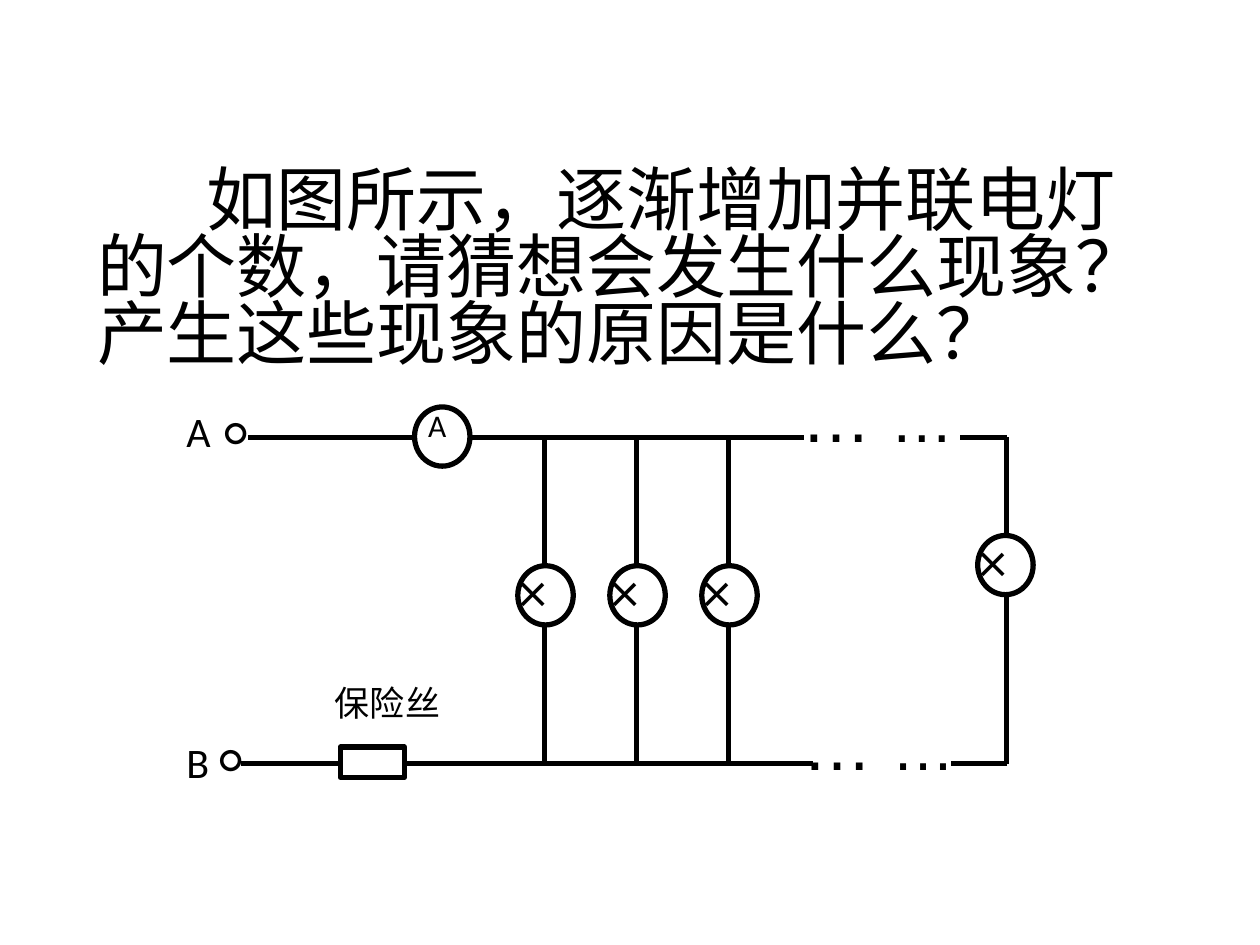
from dataclasses import dataclass

from lxml import etree
from pptx import Presentation
from pptx import util as u
from pptx.dml.color import RGBColor
from pptx.enum import shapes, text
from pptx.oxml.ns import qn


@dataclass(frozen=True)
class Theme:
    ink: RGBColor = RGBColor(0, 0, 0)
    paper: RGBColor = RGBColor(255, 255, 255)
    font: str = "Calibri"
    dots_font: str = "Arial"
    wire: float = 3
    title: float = 40
    dots_small: float = 36
    lamp: float = 32
    terminal: float = 24
    label: float = 20
    meter: float = 18


THEME = Theme()
LAMP_W, LAMP_H = 0.44, 0.47


def place(sp, left, top, width, height):
    sp.left, sp.top = u.Inches(left), u.Inches(top)
    sp.width, sp.height = u.Inches(width), u.Inches(height)


def add_run(p, words, size, font=THEME.font):
    r = p.add_run()
    r.text = words
    r.font.size = u.Pt(size)
    r.font.name = font
    r.font.color.rgb = THEME.ink


def add_label(parent, box, *runs):
    sp = parent.add_textbox(*map(u.Inches, box))
    tf = sp.text_frame
    tf.word_wrap = True
    for run in runs:
        add_run(tf.paragraphs[0], *run)


def add_wire(parent, x1, y1, x2, y2):
    line = parent.add_connector(shapes.MSO_CONNECTOR.STRAIGHT,
                                *map(u.Inches, (x1, y1, x2, y2)))
    line.line.color.rgb = THEME.ink
    line.line.width = u.Pt(THEME.wire)
    etree.SubElement(line._element.spPr, qn("a:effectLst"))


def add_outline(parent, kind, *box):
    sp = parent.add_shape(kind, *map(u.Inches, box))
    sp.shadow.inherit = False
    sp.fill.background()
    sp.line.color.rgb = THEME.ink
    sp.line.width = u.Pt(THEME.wire)


def add_question(s, left, top, width, height):
    title = s.shapes.title
    place(title, left, top, width, height)
    tf = title.text_frame
    tf.word_wrap = True
    tf.auto_size = text.MSO_AUTO_SIZE.NONE
    tf.vertical_anchor = text.MSO_ANCHOR.TOP
    p = tf.paragraphs[0]
    p.alignment = text.PP_ALIGN.LEFT
    p.line_spacing = 0.8
    p.space_before = u.Pt(0)
    p._p.get_or_add_pPr().set("indent", str(u.Inches(0.87)))
    add_run(p, "如图所示，逐渐增加并联电灯的个数，请猜想会发生什么现象？"
               "产生这些现象的原因是什么？", THEME.title)


def add_branch(s, x, top, bottom, lamp_left, lamp_top):
    """One lamp with its wires to the upper and lower rails."""
    parts = s.shapes.add_group_shape().shapes
    add_outline(parts, shapes.MSO_SHAPE.OVAL, lamp_left, lamp_top, LAMP_W, LAMP_H)
    add_label(parts, (lamp_left - 0.09, lamp_top - 0.12, 0.59, 0.63),
              ("×", THEME.lamp))
    add_wire(parts, x, top, x, lamp_top)
    add_wire(parts, x, lamp_top + LAMP_H, x, bottom)


def add_terminals(s, left, top, bottom):
    parts = s.shapes.add_group_shape().shapes
    for name, y, dx, dot_y in (("A", top - 0.3, 0.29, top - 0.58),
                               ("B", bottom - 0.26, 0.25, bottom - 0.57)):
        add_label(parts, (left + dx, dot_y, 0.96, 0.77), ("。", THEME.title))
        add_label(parts, (left, y, 0.29, 0.5), (name, THEME.terminal))


def add_circuit(s, left, top, right, bottom):
    # Rails, broken at the meter, the fuse and the dots
    for x1, x2 in ((left + 0.59, 3.29), (3.73, 6.38), (7.62, right)):
        add_wire(s.shapes, x1, top, x2, top)
    for x1, x2 in ((left + 0.53, 2.7), (3.21, 6.45), (7.55, right)):
        add_wire(s.shapes, x1, bottom, x2, bottom)

    # Ammeter
    add_label(s.shapes, (3.3, top - 0.3, 0.3, 0.57), ("A", THEME.meter))
    add_outline(s.shapes, shapes.MSO_SHAPE.OVAL, 3.29, top - 0.24, LAMP_W, LAMP_H)

    # Fuse
    add_outline(s.shapes, shapes.MSO_SHAPE.RECTANGLE, 2.7, bottom - 0.13, 0.51, 0.24)
    add_label(s.shapes, (2.56, bottom - 0.7, 1.18, 0.43), ("保险丝", THEME.label))

    # Parallel lamps
    for i in range(3):
        x = 4.32 + 0.73 * i
        add_branch(s, x, top, bottom, x - 0.21, 4.49)
    add_branch(s, right, top, bottom, right - 0.23, 4.25)

    # Dots for the lamps left out
    for x, y in ((6.26, top - 0.56), (6.27, bottom - 0.55)):
        add_label(s.shapes, (x, y, 1.56, 0.77),
                  ("… ", THEME.title, THEME.dots_font),
                  ("…", THEME.dots_small, THEME.dots_font))

    add_terminals(s, left, top, bottom)


def main():
    prs = Presentation()
    prs.slide_width, prs.slide_height = u.Inches(10), u.Inches(7.5)
    s = prs.slides.add_slide(prs.slide_layouts[5])
    s.background.fill.solid()
    s.background.fill.fore_color.rgb = THEME.paper
    add_question(s, 0.67, 1.31, 8.66, 1.7)
    add_circuit(s, 1.38, 3.47, 7.99, 6.06)
    prs.save("out.pptx")


if __name__ == "__main__":
    main()
